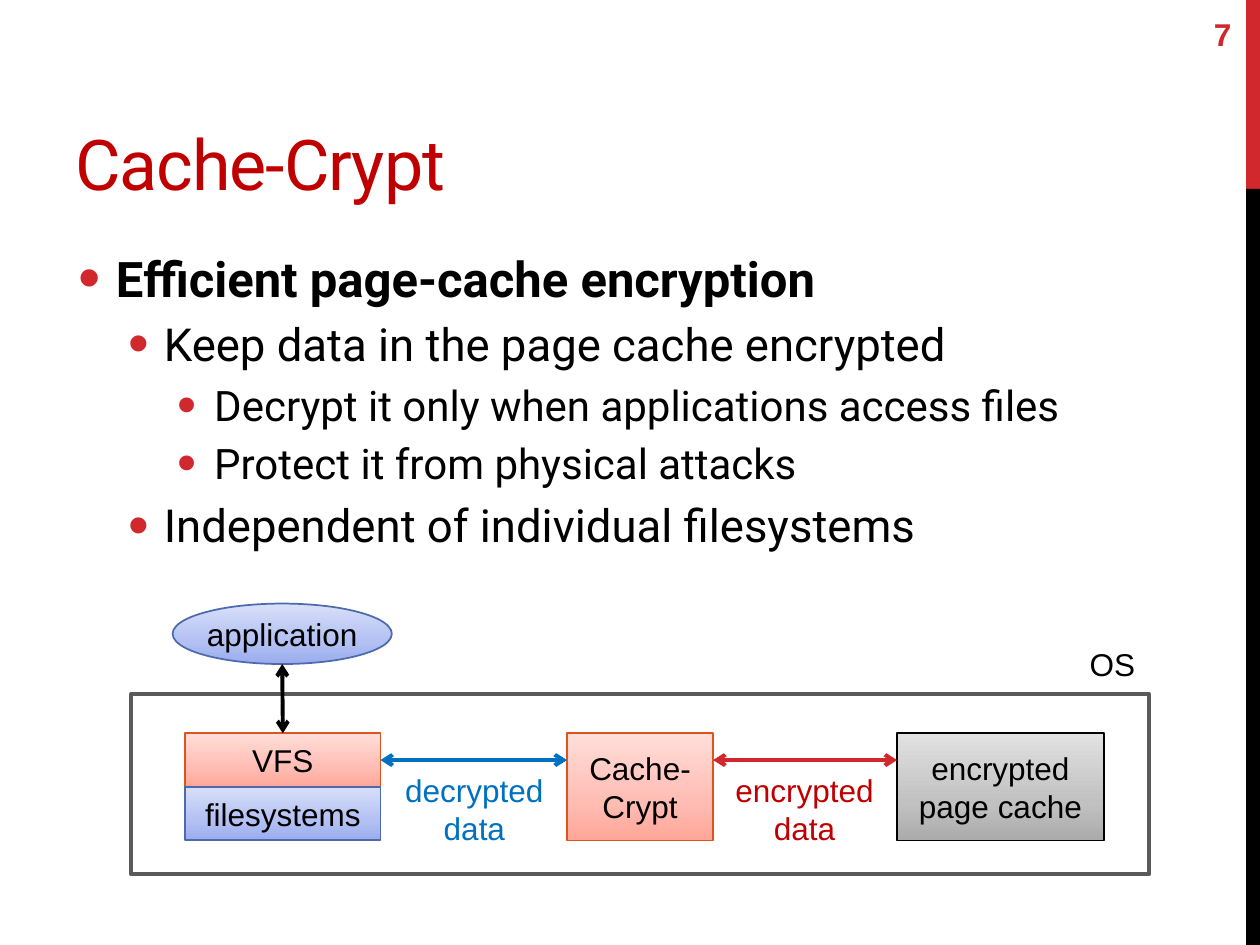
from copy import deepcopy

from lxml import etree
from pptx import Presentation
from pptx.dml.color import RGBColor
from pptx.enum.shapes import MSO_CONNECTOR, MSO_SHAPE
from pptx.enum.text import MSO_ANCHOR, PP_ALIGN
from pptx.oxml.ns import qn
from pptx.util import Inches, Pt

RECT, OVAL = MSO_SHAPE.RECTANGLE, MSO_SHAPE.OVAL
LINE = MSO_CONNECTOR.STRAIGHT
TOP, MID, LOW = MSO_ANCHOR.TOP, MSO_ANCHOR.MIDDLE, MSO_ANCHOR.BOTTOM
LEFT, MEAN, RIGHT = PP_ALIGN.LEFT, PP_ALIGN.CENTER, PP_ALIGN.RIGHT

RED, DEEP, BLUE, BLACK = "D1282E", "C00000", "0070C0", "000000"
COOL = (("9AACED", "B2C0F3", "D8DFF9"), "4E6AAE")
WARM = (("FFA698", "FFBCB3", "FFDED9"), "DC551F")
GRAY = (("ABABAB", "C1C1C1", "E1E1E1"), BLACK)

POINTS = [
    (0, 28, "Efficient page-cache encryption"),
    (1, 26, "Keep data in the page cache encrypted"),
    (2, 24, "Decrypt it only when applications access files"),
    (2, 24, "Protect it from physical attacks"),
    (1, 26, "Independent of individual filesystems"),
]
INDENTS = [(0.3, 0.3), (0.68, 0.28), (1.08, 0.29)]


def tint(code):
    return RGBColor.from_string(code)


def place(box):
    return [Inches(n) for n in box]


def add(parent, tag, **attrs):
    return etree.SubElement(parent, qn(tag), attrs)


def style(para, size, color, face="Arial", bold=False, align=LEFT):
    font = para.font
    font.name, font.size, font.bold = face, Pt(size), bold
    font.color.rgb = tint(color)
    para.alignment = align


def write(shape, text, color, anchor=MID, align=MEAN, wrap=True, **kind):
    frame = shape.text_frame
    frame.text = text
    frame.word_wrap = wrap
    frame.vertical_anchor = anchor
    for para in frame.paragraphs:
        style(para, kind.get("size", 18), color, kind.get("face", "Arial"),
              kind.get("bold", False), align)
    return frame


def label(slide, box, text, color, **kind):
    return write(slide.shapes.add_textbox(*place(box)), text, color, **kind)


def block(slide, box, fill, edge=None, width=1, form=RECT):
    shape = slide.shapes.add_shape(form, *place(box))
    shape.shadow.inherit = False
    shape.fill.solid()
    shape.fill.fore_color.rgb = tint(fill)
    if edge:
        shape.line.color.rgb = tint(edge)
        shape.line.width = Pt(width)
    else:
        shape.line.fill.background()
    return shape


def node(slide, box, text, theme, form=RECT, wrap=True):
    shades, edge = theme
    shape = block(slide, box, shades[0], edge, form=form)
    fill = shape.fill
    fill.gradient()
    fill.gradient_angle = 90
    stops = next(shape._element.iter(qn("a:gsLst")))
    stops.insert(1, deepcopy(stops[0]))
    for stop, shade, pos in zip(fill.gradient_stops, shades, (0, 0.35, 1)):
        stop.color.rgb = tint(shade)
        stop.position = pos
    write(shape, text, BLACK, wrap=wrap)
    return shape


def arrow(slide, start, end, color):
    link = slide.shapes.add_connector(LINE, *place(start + end))
    link.line.color.rgb = tint(color)
    link.line.width = Pt(2.25)
    edge = link.line._get_or_add_ln()
    for tag in ("a:headEnd", "a:tailEnd"):
        add(edge, tag, type="arrow")
    add(link._element.spPr, "a:effectLst")
    return link


def bullet(para, level):
    para.level = level
    props = para._p.get_or_add_pPr()
    left, hang = INDENTS[level]
    props.set("marL", str(Inches(left)))
    props.set("indent", str(-Inches(hang)))
    before = add(props, "a:spcBef")
    if level:
        add(before, "a:spcPct", val="20000")
    else:
        add(before, "a:spcPts", val="600")
    add(add(props, "a:buClr"), "a:srgbClr", val=RED)
    add(props, "a:buSzPct", val="130000")
    add(props, "a:buFont", typeface="Arial")
    add(props, "a:buChar", char="•")


def side(slide, box):
    x, y, w, h = box
    cut = h / 5
    block(slide, (x, y, w, cut), RED)
    block(slide, (x, y + cut, w, h - cut), BLACK)
    label(slide, (x - 0.77, y + 0.07, 0.75, 0.4), "7", RED,
          align=RIGHT, bold=True)


def title(slide, box):
    frame = label(slide, box, "Cache-Crypt", DEEP, anchor=LOW, align=LEFT,
                  size=40, face="Roboto")
    run = frame.paragraphs[0].runs[0]
    run._r.get_or_add_rPr().set("spc", "-60")


def body(slide, box):
    text = "\n".join(item[2] for item in POINTS)
    frame = label(slide, box, text, BLACK, anchor=TOP)
    frame.margin_left = frame.margin_right = Inches(0.12)
    for para, (level, size, _) in zip(frame.paragraphs, POINTS):
        style(para, size, BLACK, "Roboto", level == 0)
        bullet(para, level)


def scheme(slide, box):
    x, y, w, h = box
    node(slide, (x + 0.33, y, 1.74, 0.48), "application", COOL, OVAL, False)
    block(slide, (x, y + 0.72, w, h - 0.72), "FFFFFF", "5A5A5A", 2.25)

    row, tall = y + 1.03, 0.85
    half = tall / 2
    axis = row + half / 2
    vfs = node(slide, (x + 0.43, row, 1.55, half), "VFS", WARM)
    node(slide, (x + 0.43, row + half, 1.55, half), "filesystems", COOL)
    node(slide, (x + 3.46, row, 1.16, tall), "Cache-\nCrypt", WARM)
    node(slide, (x + 6.08, row, 1.64, tall), "encrypted\npage cache", GRAY)

    plain = arrow(slide, (x + 1.98, axis), (x + 3.46, axis), BLUE)
    plain.begin_connect(vfs, 3)
    arrow(slide, (x + 4.62, axis), (x + 6.08, axis), RED)
    call = arrow(slide, (x + 1.2, y + 0.48), (x + 1.2, row), BLACK)
    call.end_connect(vfs, 0)

    for left, word, color in ((2.07, "decrypted", BLUE),
                              (4.69, "encrypted", DEEP)):
        label(slide, (x + left, y + 1.28, 1.31, 0.71), word + "\ndata", color,
              anchor=TOP, wrap=False)
    label(slide, (x + w - 0.57, y + 0.28, 0.57, 0.4), "OS", BLACK,
          anchor=TOP, align=LEFT, wrap=False)


def main():
    deck = Presentation()
    deck.slide_width, deck.slide_height = Inches(10), Inches(7.5)
    slide = deck.slides.add_slide(deck.slide_layouts[6])
    side(slide, (9.89, 0, 0.12, 7.5))
    title(slide, (0.5, 0.17, 9.02, 1.5))
    body(slide, (0.5, 1.92, 9.02, 5.18))
    scheme(slide, (1.04, 4.79, 8.08, 2.15))
    deck.save("out.pptx")


if __name__ == "__main__":
    main()
